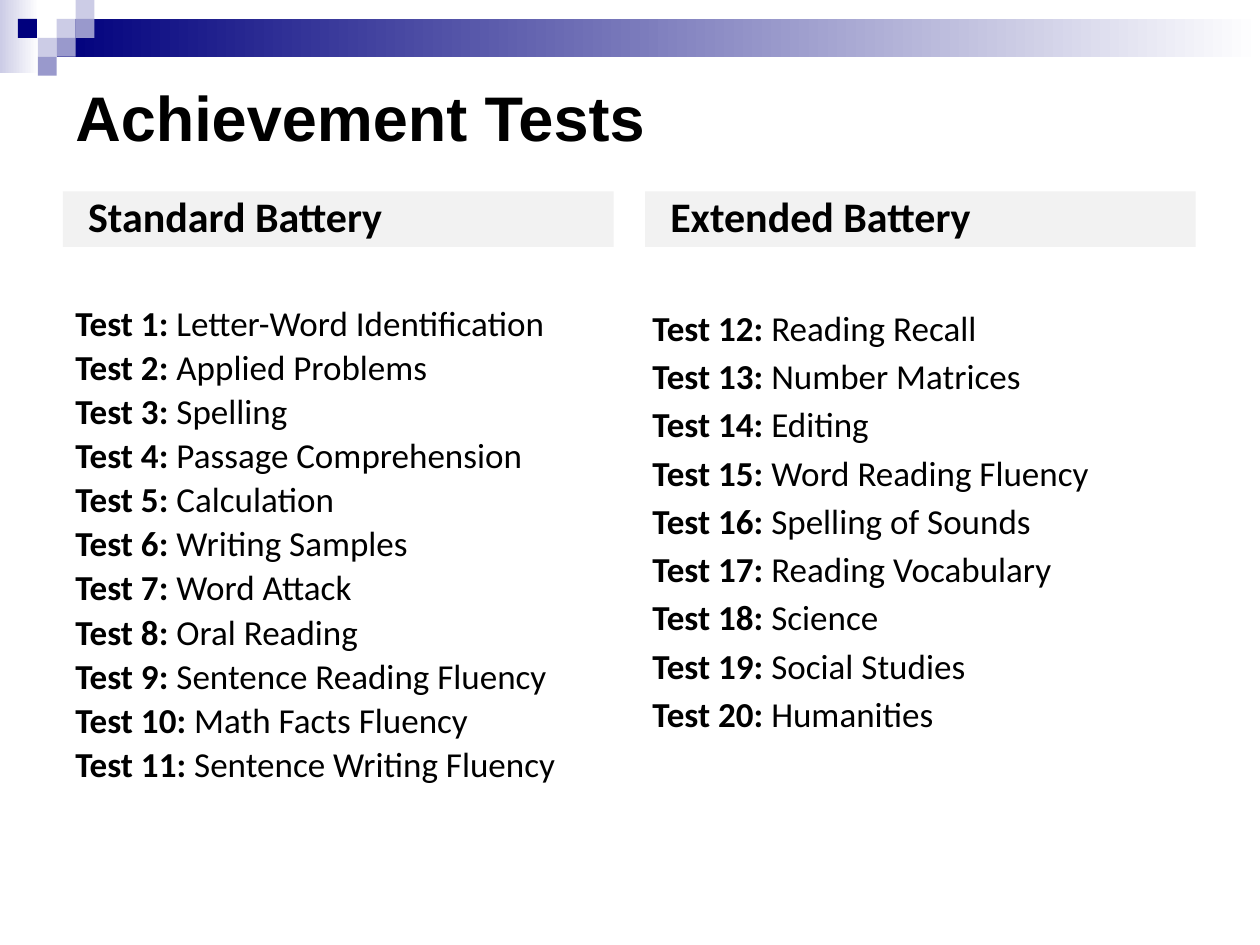
from pptx import Presentation
from pptx.dml.color import RGBColor
from pptx.enum.shapes import MSO_SHAPE
from pptx.enum.text import MSO_ANCHOR
from pptx.util import Inches, Pt

NAVY = RGBColor(0x00, 0x00, 0x7D)
LILAC = RGBColor(0xCC, 0xCC, 0xE6)
VIOLET = RGBColor(0x99, 0x99, 0xCC)
GREY = RGBColor(0xF2, 0xF2, 0xF2)
WHITE = RGBColor(0xFF, 0xFF, 0xFF)
BLACK = RGBColor(0x00, 0x00, 0x00)

TITLE = "Achievement Tests"
STANDARD = [
    "Letter-Word Identification", "Applied Problems", "Spelling",
    "Passage Comprehension", "Calculation", "Writing Samples", "Word Attack",
    "Oral Reading", "Sentence Reading Fluency", "Math Facts Fluency",
    "Sentence Writing Fluency",
]
EXTENDED = [
    "Reading Recall", "Number Matrices", "Editing", "Word Reading Fluency",
    "Spelling of Sounds", "Reading Vocabulary", "Science", "Social Studies",
    "Humanities",
]
# heading, heading left, list left, number of first test, line spacing, tests
BATTERIES = [
    ("Standard Battery", 0.5, 0.5, 1, 0.9, STANDARD),
    ("Extended Battery", 5.12, 5.08, 12, 1.0, EXTENDED),
]
BANDS = [
    ((0, 0, 0.31, 0.58), (LILAC, WHITE)),
    ((0.45, 0.15, 9.55, 0.3), (NAVY, WHITE)),
]
SQUARE = 0.15
# column, row, colour on a grid of squares
SQUARES = [
    (3, 1, LILAC), (4, 0, LILAC), (4, 1, VIOLET), (2, 2, LILAC),
    (0.95, 1, NAVY), (3, 2, VIOLET), (2, 3, VIOLET),
]


def add_rect(s, box, *colors):
    """Add a rectangle; two colours make a left-to-right gradient."""
    sp = s.shapes.add_shape(MSO_SHAPE.RECTANGLE, *map(Inches, box))
    sp.shadow.inherit = False
    sp.line.fill.background()
    if len(colors) == 1:
        sp.fill.solid()
        sp.fill.fore_color.rgb = colors[0]
    else:
        sp.fill.gradient()
        sp.fill.gradient_angle = 0
        for stop, color in zip(sp.fill.gradient_stops, colors):
            stop.color.rgb = color
    return sp


def add_text(s, box, lines, size=20, font="Calibri", anchor=MSO_ANCHOR.TOP,
             left_inset=0.1, spacing=1.0, before=0, hanging=0):
    """Write lines, each a list of (text, bold) runs, in a text box."""
    sp = s.shapes.add_textbox(*map(Inches, box))
    tf = sp.text_frame
    tf.word_wrap = True
    tf.vertical_anchor = anchor
    tf.margin_left = Inches(left_inset)
    for i, runs in enumerate(lines):
        p = tf.add_paragraph() if i else tf.paragraphs[0]
        p.line_spacing = spacing
        if i:
            p.space_before = Pt(before)
        if hanging:
            pPr = p._p.get_or_add_pPr()
            pPr.set("marL", str(Inches(hanging)))
            pPr.set("indent", str(-Inches(hanging)))
        for text, bold in runs:
            r = p.add_run()
            r.text = text
            r.font.name = font
            r.font.size = Pt(size)
            r.font.bold = bold
            r.font.color.rgb = BLACK


prs = Presentation()
prs.slide_width, prs.slide_height = Inches(10), Inches(7.5)
s = prs.slides.add_slide(prs.slide_layouts[6])

for box, colors in BANDS:
    add_rect(s, box, *colors)
for col, row, color in SQUARES:
    add_rect(s, (col * SQUARE, row * SQUARE, SQUARE, SQUARE), color)

add_text(s, (0.5, 0.3, 9, 1.25), [[(TITLE, True)]], size=36, font="Arial",
         anchor=MSO_ANCHOR.MIDDLE)

for heading, head_left, list_left, first, spacing, tests in BATTERIES:
    head_box = (head_left, 1.52, 4.37, 0.44)
    add_rect(s, head_box, GREY)
    add_text(s, head_box, [[(heading, True)]], size=24,
             anchor=MSO_ANCHOR.BOTTOM, left_inset=0.2)
    lines = [[(f"Test {n}: ", True), (name, False)]
             for n, name in enumerate(tests, first)]
    add_text(s, (list_left, 2.38, 4.42, 4.32), lines, spacing=spacing,
             before=3.6, hanging=0.38)

prs.save("out.pptx")
